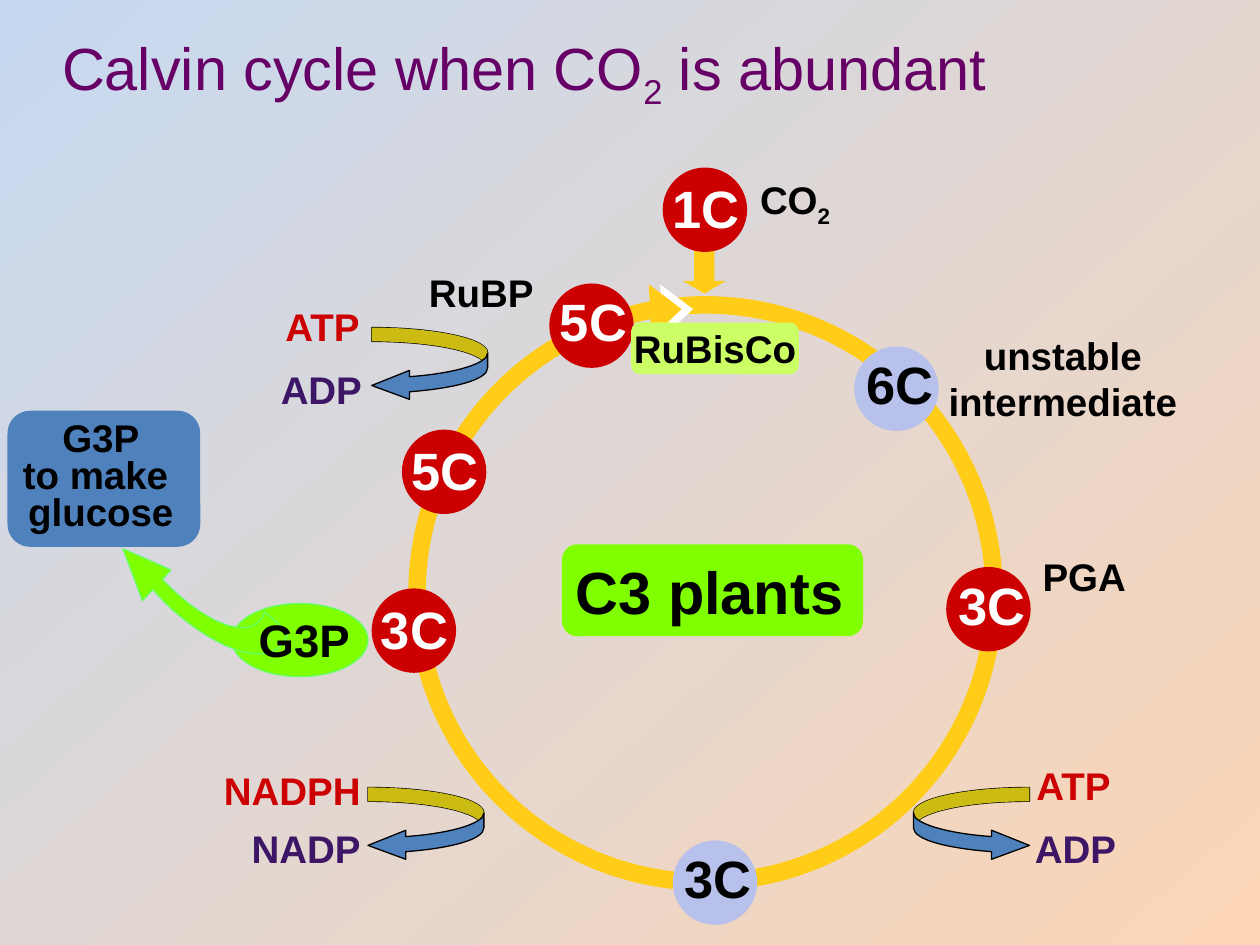
from lxml import etree
from pptx import Presentation
from pptx.dml.color import RGBColor
from pptx.enum.shapes import MSO_SHAPE as SHAPE
from pptx.enum.text import MSO_ANCHOR, MSO_AUTO_SIZE, PP_ALIGN
from pptx.oxml.ns import qn
from pptx.util import Inches, Pt

COLORS = {
    "peach": "FCD5B5", "sky": "C6D9F1", "gold": "FFCC18", "red": "CC0000",
    "lilac": "B7C1EB", "black": "000000", "white": "FFFFFF", "plum": "660066",
    "violet": "3D1666", "blue": "4F81BD", "mustard": "CCBB13",
    "lime": "80FF00", "lime_edge": "66FF66", "pale_lime": "CCFF66",
}
CARBON_SIZE = 0.67
LABEL_INSETS = (0, 0, 0.04, 0)
PLATE_INSETS = (0.04, 0.04, 0.1, 0.04)

# Outlines in inches inside their box: a pair is a straight step,
# three pairs are a Bezier curve
OUTER_EDGE = [(0, 0), ((0.51, 0), (0.92, 0.09), (0.92, 0.2))]
INNER_EDGE = [((0.77, 0.17), (0.41, 0.11), (0, 0.11))]
TAIL_BAND = OUTER_EDGE + [((0.92, 0.22), (0.91, 0.24), (0.88, 0.26))] + INNER_EDGE
CREASE = [(0.04, 0), ((0.04, 0.02), (0.03, 0.04), (0, 0.06))]
TURN_ARROW = OUTER_EDGE + [
    (0.92, 0.32), ((0.92, 0.41), (0.68, 0.48), (0.3, 0.51)),
    (0.3, 0.57), (0, 0.46), (0.3, 0.34), (0.3, 0.39),
    ((0.58, 0.37), (0.79, 0.32), (0.88, 0.26))] + INNER_EDGE
EXIT_ARROW = [
    (0.46, 1.02), ((0.45, 0.58), (0.3, 0.24), (0.11, 0.26)),
    ((0.08, 0.26), (0.05, 0.27), (0.03, 0.29)), (0, 0.04),
    ((0.25, -0.12), (0.49, 0.21), (0.56, 0.77)),
    ((0.57, 0.85), (0.57, 0.93), (0.57, 1.01)),
    (0.69, 1), (0.53, 1.41), (0.36, 1.03)]
DOWN_ARROW = [(0, 0.31), (0.09, 0.31), (0.09, 0), (0.25, 0),
              (0.25, 0.31), (0.34, 0.31), (0.17, 0.41)]


def rgb(name):
    return RGBColor.from_string(COLORS[name])


def paint(shape, fill=None, line=None, width=0.75):
    shape.shadow.inherit = False
    if fill:
        shape.fill.solid()
        shape.fill.fore_color.rgb = rgb(fill)
    else:
        shape.fill.background()
    if line:
        shape.line.color.rgb = rgb(line)
        shape.line.width = Pt(width)
    else:
        shape.line.fill.background()
    return shape


def add_preset(slide, kind, box, **look):
    return paint(slide.shapes.add_shape(kind, *map(Inches, box)), **look)


def add_outline(slide, box, outline, mirrored=False, close=True, **look):
    left, top, width, height = map(Inches, box)
    builder = slide.shapes.build_freeform(left, top, scale=1.0)
    builder.add_line_segments([(left + width, top), (left + width, top + height)])
    shape = builder.convert_to_shape()
    # Give the box its curved outline
    outline_xml = shape._element.find(".//" + qn("a:path"))
    for segment in list(outline_xml):
        outline_xml.remove(segment)
    for number, part in enumerate(outline):
        curved = isinstance(part[0], tuple)
        tag = "a:cubicBezTo" if curved else "a:lnTo" if number else "a:moveTo"
        segment = etree.SubElement(outline_xml, qn(tag))
        for x, y in part if curved else (part,):
            across = box[2] - x if mirrored else x
            etree.SubElement(segment, qn("a:pt"), x=str(Inches(across)), y=str(Inches(y)))
    if close:
        etree.SubElement(outline_xml, qn("a:close"))
    return paint(shape, **look)


def write(shape, text, size, color="black", bold=True, insets=LABEL_INSETS,
          indent=0.04, spacing=None):
    """Write centred lines; text between underscores is subscript."""
    frame = shape.text_frame
    frame_format = {"word_wrap": False, "vertical_anchor": MSO_ANCHOR.MIDDLE}
    sides = ("margin_left", "margin_top", "margin_right", "margin_bottom")
    frame_format.update(zip(sides, map(Inches, insets)))
    for name, value in frame_format.items():
        setattr(frame, name, value)
    for number, line in enumerate(text.split("\n")):
        paragraph = frame.add_paragraph() if number else frame.paragraphs[0]
        paragraph.alignment = PP_ALIGN.CENTER
        if spacing:
            paragraph.line_spacing = spacing
        paragraph._p.get_or_add_pPr().set("marL", str(Inches(indent)))
        for part, words in enumerate(line.split("_")):
            if not words:
                continue
            run = paragraph.add_run()
            run.text = words
            for name, value in {"size": Pt(size), "name": "Arial", "bold": bold}.items():
                setattr(run.font, name, value)
            run.font.color.rgb = rgb(color)
            if part % 2:
                run.font._element.set("baseline", "-25000")


def add_label(slide, box, text, size=22, color="black", **options):
    label = slide.shapes.add_textbox(*map(Inches, box))
    write(label, text, size, color, **options)
    label.text_frame.auto_size = MSO_AUTO_SIZE.SHAPE_TO_FIT_TEXT


def add_plate(slide, box, text, size, fill, **options):
    write(add_preset(slide, SHAPE.ROUNDED_RECTANGLE, box, fill=fill), text, size, **options)


def add_carbon(slide, x, y, text, shift, fill="red", color="white"):
    add_preset(slide, SHAPE.OVAL, (x, y, CARBON_SIZE, CARBON_SIZE), fill=fill)
    add_label(slide, (x + shift[0], y + shift[1], 0.7, 0.57), text, 30, color)


def add_ring(slide, x, y, size):
    add_outline(slide, (x + 2.11, y - 0.5, 0.34, 0.41), DOWN_ARROW, fill="gold")
    add_preset(slide, SHAPE.OVAL, (x, y, size, size), line="gold", width=10)
    # Arrowhead with a white edge where the cycle starts again
    for offset, fill in ((1.94, "white"), (1.85, "gold")):
        head = add_preset(slide, SHAPE.RIGHT_ARROW,
                          (x + offset, y - 0.17, 0.25, 0.42), fill=fill)
        head.rotation = 357
        head.adjustments[0], head.adjustments[1] = 0.484, 1


def add_turnover(slide, x, y, mirrored, labels):
    """Curved arrow from the used carrier to the spent one."""
    add_outline(slide, (x, y, 0.92, 0.57), TURN_ARROW, mirrored, fill="blue", line="black")
    add_outline(slide, (x, y, 0.92, 0.26), TAIL_BAND, mirrored, fill="mustard")
    crease_x = x if mirrored else x + 0.88
    add_outline(slide, (crease_x, y + 0.2, 0.04, 0.06), CREASE, mirrored,
                close=False, line="black")
    for (text, left, top, width), color in zip(labels, ("red", "violet")):
        add_label(slide, (left, top, width, 0.46), text, color=color)


def add_glucose_exit(slide, x, y):
    add_plate(slide, (x, y, 1.53, 1.08), "G3P\nto make \nglucose", 22, "blue",
              insets=PLATE_INSETS, indent=0.01, spacing=0.8)
    edge = {"fill": "lime", "line": "lime_edge"}
    add_preset(slide, SHAPE.OVAL, (x + 1.78, y + 1.53, 1.08, 0.58), **edge)
    arrow = add_outline(slide, (x + 1.18, y + 0.79, 0.69, 1.41), EXIT_ARROW, **edge)
    arrow.rotation = 138
    add_label(slide, (x + 1.91, y + 1.55, 0.89, 0.53), "G3P", 26)


def main():
    deck = Presentation()
    deck.slide_width, deck.slide_height = Inches(10), Inches(7.5)
    slide = deck.slides.add_slide(deck.slide_layouts[6])

    # Background and title
    backdrop = slide.background.fill
    backdrop.gradient()
    backdrop.gradient_angle = 131
    for stop, name in zip(backdrop.gradient_stops, ("peach", "sky")):
        stop.color.rgb = rgb(name)
    add_label(slide, (0.42, 0.28, 7.48, 0.57), "Calvin cycle when CO_2_ is abundant",
              34, "plum", bold=False)

    # Cycle with its carbon compounds
    add_ring(slide, 3.31, 2.42, 4.58)
    for x, y, text, shift in (
            (5.26, 1.33, "1C", (-0.01, 0.03)), (4.36, 2.25, "5C", (0, 0.01)),
            (7.51, 4.5, "3C", (0.01, 0.01)), (2.95, 4.67, "3C", (-0.01, 0.03)),
            (3.19, 3.41, "5C", (-0.01, 0.03))):
        add_carbon(slide, x, y, text, shift)
    for x, y, text in ((6.78, 2.75, "6C"), (5.34, 6.67, "3C")):
        add_carbon(slide, x, y, text, (0.01, 0.01), "lilac", "black")
    for box, text in (
            ((7.44, 2.59, 1.99, 0.82), "unstable\nintermediate"),
            ((5.94, 1.34, 0.74, 0.53), "CO_2_"),
            ((3.32, 2.09, 1, 0.46), "RuBP"), ((8.19, 4.34, 0.83, 0.46), "PGA")):
        add_label(slide, box, text)

    # Energy carriers
    add_turnover(slide, 7.25, 6.25, True, (("ATP", 8.14, 6, 0.76), ("ADP", 8.13, 6.5, 0.81)))
    add_turnover(slide, 2.92, 6.25, False,
                 (("NADPH", 1.69, 6.04, 1.26), ("NADP", 1.91, 6.5, 1.04)))
    add_turnover(slide, 2.95, 2.6, False,
                 (("ATP", 2.18, 2.36, 0.76), ("ADP", 2.14, 2.86, 0.82)))

    # Product, enzyme and plant type
    add_glucose_exit(slide, 0.06, 3.26)
    add_plate(slide, (5.01, 2.56, 1.33, 0.41), "RuBisCo", 22, "pale_lime",
              insets=(0, 0, 0, 0), indent=0)
    add_plate(slide, (4.46, 4.32, 2.39, 0.73), "C3 plants", 34, "lime",
              insets=PLATE_INSETS, indent=0.01)
    deck.save("out.pptx")


if __name__ == "__main__":
    main()
